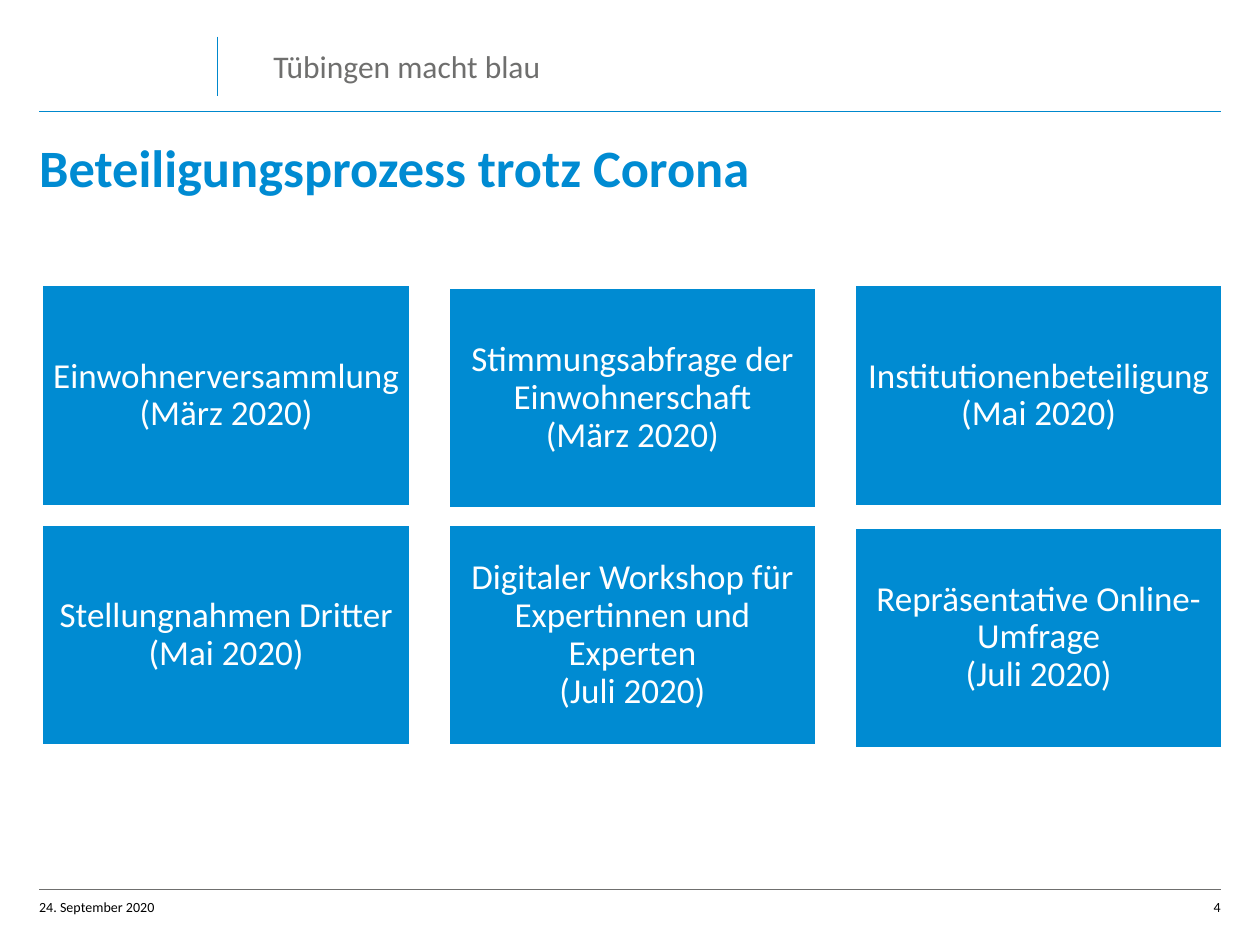
from pptx import Presentation
from pptx.dml.color import RGBColor
from pptx.enum import shapes, text
from pptx.oxml.ns import qn
from pptx.util import Cm, Pt
from lxml import etree

COLORS = {"blue": "008BD2", "rule": "0088CD", "grey": "6F6F6E",
          "white": "FFFFFF", "black": "000000"}
LEFT, RIGHT = 0.79, 24.61
TITLE = "Beteiligungsprozess trotz Corona"

# (start x, start y, end x, end y) in cm, colour
RULES = [
    ((LEFT, 2.24, RIGHT, 2.24), "rule"),
    ((LEFT, 17.93, RIGHT, 17.93), "grey"),
    ((4.39, 0.74, 4.39, 1.93), "rule"),
]
# wording, (left, top, width, height) in cm, format
LABELS = [
    ("Tübingen macht blau", (5.51, 0.74, 16.61, 1.19),
     {"size": 18, "color": "grey"}),
    ("24. September 2020", (LEFT, 18.03, 4.29, 0.51),
     {"size": 8, "color": "black"}),
    ("4", (23.21, 18.03, 1.4, 0.51),
     {"size": 8, "color": "black", "align": text.PP_ALIGN.RIGHT}),
]
# wording of each step, downward shift in cm
STEPS = [
    ("Einwohnerversammlung\n(März 2020)", 0),
    ("Stimmungsabfrage der Einwohnerschaft\n(März 2020)", 0.05),
    ("Institutionenbeteiligung\n(Mai 2020)", 0),
    ("Stellungnahmen Dritter\n(Mai 2020)", 0),
    ("Digitaler Workshop für Expertinnen und Experten\n(Juli 2020)", 0),
    ("Repräsentative Online-Umfrage\n(Juli 2020)", 0.05),
]
COLUMNS = 3
STEP_LEFT, STEP_TOP = 0.84, 5.74
STEP_WIDTH, STEP_HEIGHT = 7.44, 4.47
PITCH_X, PITCH_Y = 8.19, 4.83


def rgb(name):
    return RGBColor.from_string(COLORS[name])


def write(shape, wording, size, color, bold=False, align=text.PP_ALIGN.LEFT,
          anchor=text.MSO_ANCHOR.MIDDLE, spacing=1.0, inset=0):
    frame = shape.text_frame
    frame_format = {"word_wrap": True, "auto_size": text.MSO_AUTO_SIZE.NONE,
                    "vertical_anchor": anchor}
    for side in ("left", "top", "right", "bottom"):
        frame_format[f"margin_{side}"] = Cm(inset)
    paragraph = frame.paragraphs[0]
    paragraph.text = wording.replace("\n", "\v")
    formats = [
        (frame, frame_format),
        (paragraph, {"alignment": align, "line_spacing": spacing}),
        (paragraph.font, {"name": "Calibri", "size": Pt(size), "bold": bold}),
    ]
    for target, values in formats:
        for attribute, value in values.items():
            setattr(target, attribute, value)
    paragraph.font.color.rgb = rgb(color)


def add_rule(slide, ends, color):
    rule = slide.shapes.add_connector(shapes.MSO_CONNECTOR.STRAIGHT,
                                      *map(Cm, ends))
    rule.line.color.rgb = rgb(color)
    rule.line.width = Pt(0.5)
    etree.SubElement(rule._element.spPr, qn("a:effectLst"))


def add_step(slide, index, wording, shift):
    row, column = divmod(index, COLUMNS)
    step = slide.shapes.add_shape(
        shapes.MSO_SHAPE.RECTANGLE,
        Cm(STEP_LEFT + column * PITCH_X), Cm(STEP_TOP + row * PITCH_Y + shift),
        Cm(STEP_WIDTH), Cm(STEP_HEIGHT))
    step.shadow.inherit = False
    step.fill.solid()
    step.fill.fore_color.rgb = rgb("blue")
    step.line.color.rgb = rgb("white")
    step.line.width = Pt(2)
    write(step, wording, 20, "white", align=text.PP_ALIGN.CENTER,
          spacing=0.9, inset=0.2)


def main():
    deck = Presentation()
    deck.slide_width, deck.slide_height = Cm(25.4), Cm(19.05)
    slide = deck.slides.add_slide(deck.slide_layouts[5])

    for ends, color in RULES:
        add_rule(slide, ends, color)

    title = slide.shapes.title
    title.left, title.top, title.width, title.height = map(
        Cm, (LEFT, 2.82, RIGHT - LEFT, 2.01))
    write(title, TITLE, 30, "blue", bold=True,
          anchor=text.MSO_ANCHOR.TOP, spacing=0.95)

    for index, (wording, shift) in enumerate(STEPS):
        add_step(slide, index, wording, shift)
    for wording, place, label_format in LABELS:
        write(slide.shapes.add_textbox(*map(Cm, place)), wording, **label_format)

    deck.save("out.pptx")


if __name__ == "__main__":
    main()
